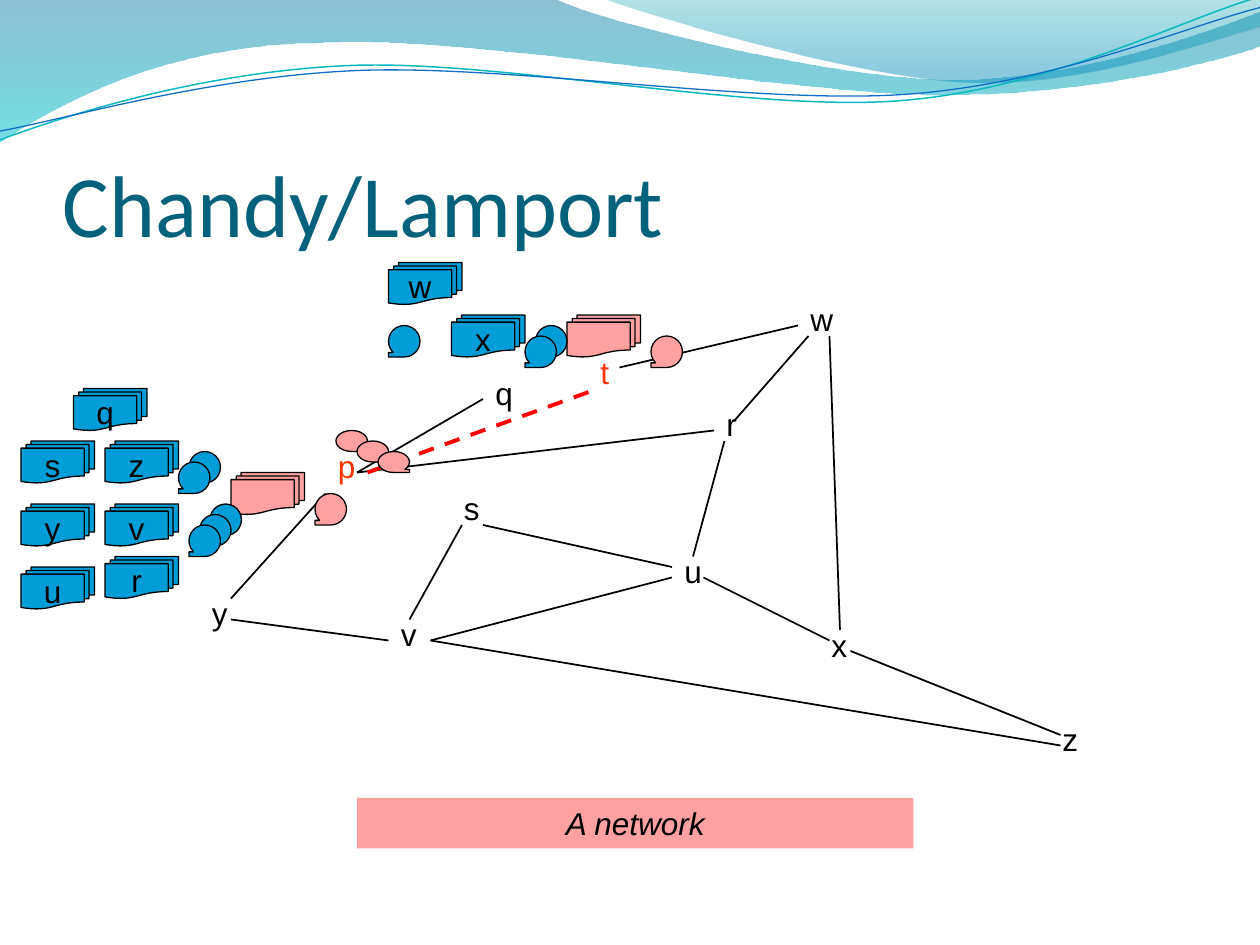
import math
import pptx
import pptx.dml.color
import pptx.enum.dml
import pptx.enum.shapes
import pptx.enum.text
import pptx.oxml.ns
import pptx.util
from lxml import etree

Cm, Pt = pptx.util.Cm, pptx.util.Pt
qn = pptx.oxml.ns.qn
Kind = pptx.enum.shapes.MSO_SHAPE
Text = pptx.enum.text


class Theme:
    ink, blue, pink = "000000", "009DD9", "FFA1A1"
    hot, dash, head = "FF3300", "FF0000", "04617B"
    teal, navy = "0AB8BF", "0F6FC6"
    deep = (("0074A1", 0, 45), ("00C6CF", 1, 55))
    pale = (("00A1A9", 0, 30), ("008BBF", 0.8, 45))
    body, big = 18, 50
    font, title = "Arial", "Calibri"
    thin, edge, bold = 0.75, 1, 2.25


WAVES = (
    (Theme.deep, [(0, -0.1), (44, -0.1), (47.6, 1.7, 66.4, 6.3, 75.8, 6.3),
                  (85.3, 6.3, 95.8, 2.6, 100, 0.9), (100.1, 3.6),
                  (98.3, 4.4, 87, 7.6, 74.6, 7.5), (62.2, 7.5, 38.2, 2.8, 25.7, 3.4),
                  (12.9, 3.5, 4.6, 8.3, -0.1, 11.3), (0, -0.1)]),
    (Theme.pale, [(47.9, -0.1), (50.9, 1.1, 68.2, 6.2, 76.9, 6.5),
                  (85.6, 6.9, 96.1, 3.2, 100, 2.1), (100, 0), (47.9, -0.1)]),
)
CURVES = (
    (Theme.teal, 0.85, [(0, 11.1), (4.8, 9.3, 15.8, 5.7, 27.7, 5.2),
                        (39.5, 4.7, 59.3, 8.9, 71.3, 8), (83.3, 7.1, 93.8, 1.5, 99.8, -0.2)]),
    (Theme.navy, 0.75, [(0, 10.4), (4.7, 9.6, 16.4, 6.1, 28.3, 5.6),
                        (40.3, 5.1, 59.7, 8.3, 71.7, 7.5), (83.6, 6.7, 94.1, 2.1, 100, 0.6)]),
)
NODES = {"p": (12, 14), "q": (27, 7), "r": (49, 10), "s": (24, 18), "t": (37, 5),
         "u": (45, 24), "v": (18, 30), "w": (57, 0), "x": (59, 31), "y": (0, 28), "z": (81, 40)}
EDGES = ((12, 19, 3, 29), (3, 31, 18, 33), (25, 22, 20, 31), (15, 17, 49, 13),
         (15, 17, 27, 10), (51, 12, 58, 4), (50, 14, 47, 25), (22, 33, 82, 43),
         (22, 33, 45, 27), (40, 7, 57, 3), (60, 4, 61, 32), (48, 27, 60, 33),
         (27, 22, 45, 26), (62, 34, 82, 42))
CUT = (16, 17, 38, 9)
P_STATE = {
    "docs": [("", 20, 8), ("q", 5, 0), ("s", 0, 5), ("z", 8, 5), ("y", 0, 11),
             ("v", 8, 11), ("u", 0, 17), ("r", 8, 16)],
    "marks": [(30, 4), (32, 5), (34, 6)],
    "pink": [(28, 10)],
    "blue": [(18, 11), (17, 12), (16, 13), (16, 6), (15, 7)],
}
T_STATE = {
    "docs": [("", 17, 5), ("w", 0, 0), ("x", 6, 5)],
    "marks": [],
    "pink": [(25, 7)],
    "blue": [(0, 6), (14, 6), (13, 7)],
}


def grid(n):
    return Cm(2.54 * n / 12)


def place(box, x, y, w, h):
    return [grid(n) for n in (box[0] + x, box[1] + y, w, h)]


def rgb(tone):
    return pptx.dml.color.RGBColor.from_string(tone)


def dress(item, **values):
    for key, value in values.items():
        setattr(item, key, value)


def paint(shape, fill=None, line=None, width=Theme.thin):
    shape.shadow.inherit = False
    for part, tone in ((shape.fill, fill), (shape.line.fill, line)):
        if tone:
            part.solid()
            part.fore_color.rgb = rgb(tone)
        else:
            part.background()
    if line:
        shape.line.width = Pt(width)


def write(shape, text, tone=Theme.ink, size=Theme.body, font=Theme.font,
          slant=False, align=None, **frame):
    dress(shape.text_frame, **frame)
    para = shape.text_frame.paragraphs[0]
    para.alignment = align
    run = para.add_run()
    run.text = text
    dress(run.font, size=Pt(size), name=font, italic=slant)
    run.font.color.rgb = rgb(tone)


def blend(shape, stops):
    shape.fill.gradient()
    shape.fill.gradient_angle = 270
    for stop, (tone, where, _) in zip(shape.fill.gradient_stops, stops):
        stop.color.rgb = rgb(tone)
        stop.position = where
    nodes = shape._element.spPr.iter(qn("a:srgbClr"))
    for node, (_, _, alpha) in zip(nodes, stops):
        etree.SubElement(node, qn("a:alpha")).set("val", str(alpha * 1000))


def turn(dot, angle, mid):
    cos, sin = math.cos(math.radians(angle)), math.sin(math.radians(angle))
    x, y = dot[0] - mid[0], dot[1] - mid[1]
    return mid[0] + x * cos - y * sin, mid[1] + x * sin + y * cos


def outline(slide, box, steps, tilt=0):
    unit = box[2] / 100
    dots = []
    for step in steps:
        for pair in zip(step[::2], step[1::2]):
            x, y = turn(pair, tilt, (49.9, 5.8))
            dots.append((int(grid(box[0] + x * unit)), int(grid(box[1] + y * unit))))
    pen = slide.shapes.build_freeform(*dots[0])
    pen.add_line_segments(dots[1:], close=False)
    shape = pen.convert_to_shape()
    lines = iter(list(shape._element.spPr.iter(qn("a:lnTo"))))
    for step in steps[1:]:
        first = next(lines)
        if len(step) == 6:
            bend = etree.Element(qn("a:cubicBezTo"))
            first.addprevious(bend)
            for line in (first, next(lines), next(lines)):
                bend.append(line[0])
                line.getparent().remove(line)
    return shape


def header(slide, box):
    for stops, steps in WAVES:
        wave = outline(slide, box, steps)
        paint(wave)
        blend(wave, stops)
    tilt = 2.7
    for tone, width, steps in CURVES:
        curve = outline(slide, box, steps, tilt)
        paint(curve, line=tone, width=width)
        curve.rotation = 360 - tilt


def title(slide, box):
    label = slide.shapes.add_textbox(*place(box, 0, 0, *box[2:]))
    write(label, "Chandy/Lamport", Theme.head, Theme.big, Theme.title, word_wrap=True,
          vertical_anchor=Text.MSO_ANCHOR.BOTTOM, margin_left=0, margin_right=0,
          margin_bottom=0)


def link(slide, box, ends, tone=Theme.ink, width=Theme.edge):
    points = [grid(box[i % 2] + n) for i, n in enumerate(ends)]
    line = slide.shapes.add_connector(pptx.enum.shapes.MSO_CONNECTOR.STRAIGHT, *points)
    line.line.color.rgb = rgb(tone)
    line.line.width = Pt(width)
    etree.SubElement(line._element.spPr, qn("a:effectLst"))
    return line


def network(slide, box):
    for name, (x, y) in NODES.items():
        label = slide.shapes.add_textbox(*place(box, x, y, 5, 4.8))
        write(label, name, Theme.hot if name in "pt" else Theme.ink, word_wrap=True,
              auto_size=Text.MSO_AUTO_SIZE.SHAPE_TO_FIT_TEXT)
    for ends in EDGES:
        link(slide, box, ends)
    cut = link(slide, box, CUT, Theme.dash, Theme.bold)
    cut.line.dash_style = pptx.enum.dml.MSO_LINE.DASH


def caption(slide, box):
    bar = slide.shapes.add_shape(Kind.RECTANGLE, *place(box, 0, 0, *box[2:]))
    paint(bar, Theme.pink)
    write(bar, "A network", slant=True, align=Text.PP_ALIGN.CENTER, word_wrap=True,
          vertical_anchor=Text.MSO_ANCHOR.TOP,
          auto_size=Text.MSO_AUTO_SIZE.SHAPE_TO_FIT_TEXT)


def tape(slide, box, spot, tone, size=(3, 3), flip=True):
    shape = slide.shapes.add_shape(Kind.FLOWCHART_SEQUENTIAL_ACCESS_STORAGE,
                                   *place(box, *spot, *size))
    paint(shape, tone, Theme.ink)
    if flip:
        shape._element.spPr.get_or_add_xfrm().set("flipH", "1")


def state(slide, box, parts):
    for name, x, y in parts["docs"]:
        doc = slide.shapes.add_shape(Kind.FLOWCHART_MULTIDOCUMENT, *place(box, x, y, 7, 4))
        paint(doc, Theme.blue if name else Theme.pink, Theme.ink)
        if name:
            write(doc, name, align=Text.PP_ALIGN.CENTER, word_wrap=False,
                  vertical_anchor=Text.MSO_ANCHOR.MIDDLE)
    for spot in parts["marks"]:
        tape(slide, box, spot, Theme.pink, (3, 2), False)
    for tone in ("pink", "blue"):
        for spot in parts[tone]:
            tape(slide, box, spot, getattr(Theme, tone))


def main():
    deck = pptx.Presentation()
    dress(deck, slide_width=Cm(25.4), slide_height=Cm(19.05))
    slide = deck.slides.add_slide(deck.slide_layouts[6])
    header(slide, (0, 0, 120, 14))
    title(slide, (6, 9.25, 109, 15))
    network(slide, (19, 28, 86, 45))
    caption(slide, (34, 76, 53, 4.8))
    state(slide, (2, 37, 37, 21), P_STATE)
    state(slide, (37, 25, 28, 10), T_STATE)
    deck.save("out.pptx")


if __name__ == "__main__":
    main()
